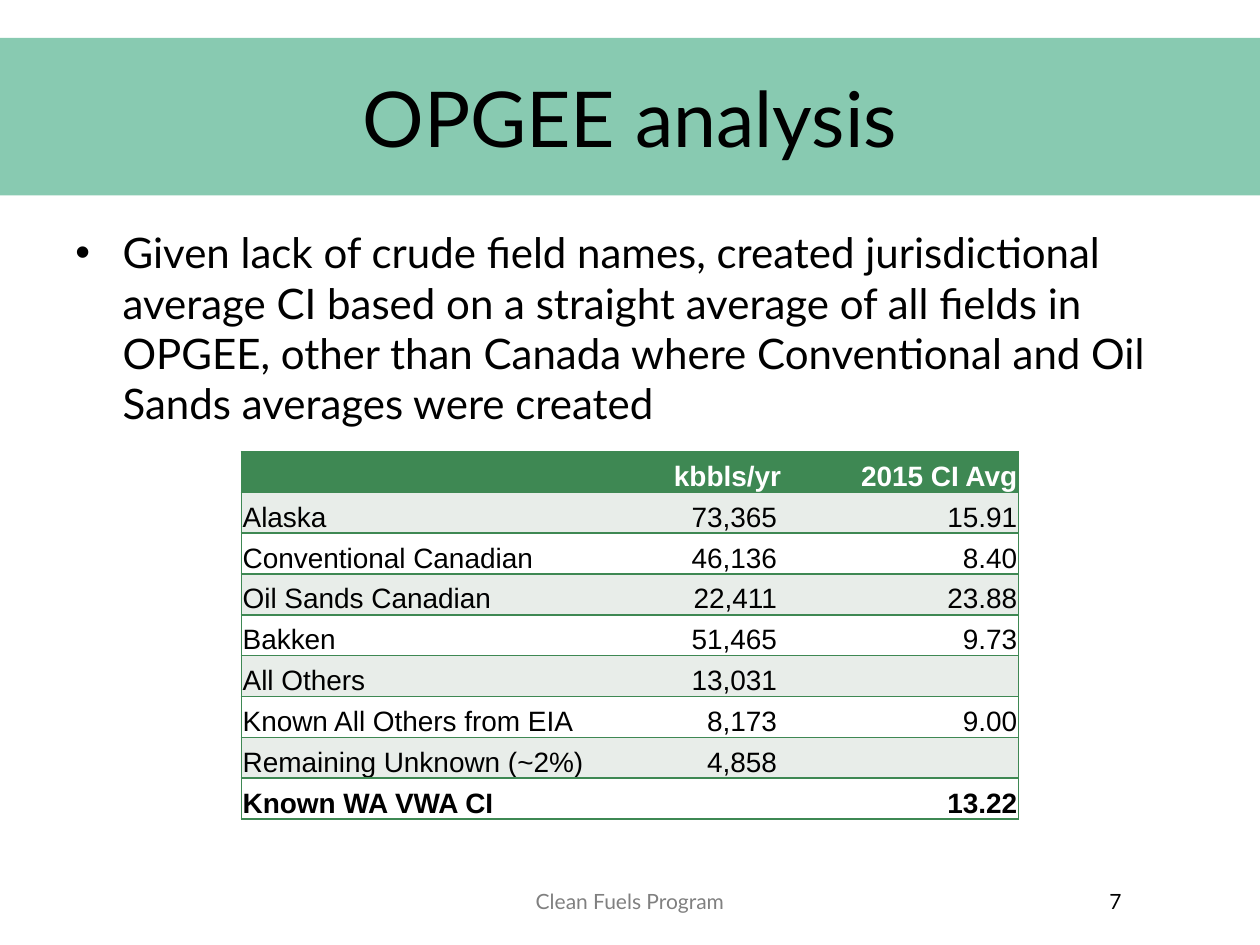
from lxml import etree
from pptx import Presentation
from pptx.dml.color import RGBColor
from pptx.enum.shapes import MSO_SHAPE
from pptx.enum.text import MSO_ANCHOR, PP_ALIGN
from pptx.oxml.ns import qn
from pptx.util import Pt

RECTANGLE = MSO_SHAPE.RECTANGLE
TOP, MIDDLE, BOTTOM = MSO_ANCHOR.TOP, MSO_ANCHOR.MIDDLE, MSO_ANCHOR.BOTTOM
LEFT, CENTER, RIGHT = PP_ALIGN.LEFT, PP_ALIGN.CENTER, PP_ALIGN.RIGHT

ROWS = [
    ("", "kbbls/yr", "2015 CI Avg"),
    ("Alaska", "73,365", "15.91"),
    ("Conventional Canadian", "46,136", "8.40"),
    ("Oil Sands Canadian", "22,411", "23.88"),
    ("Bakken", "51,465", "9.73"),
    ("All Others", "13,031", ""),
    ("Known All Others from EIA", "8,173", "9.00"),
    ("Remaining Unknown (~2%)", "4,858", ""),
    ("Known WA VWA CI", "", "13.22"),
]
COLUMN_WIDTHS = [217, 92, 135]


def color(value):
    return RGBColor.from_string(value)


class SlideBuilder:
    text_font, table_font = "Lato", "Arial"
    black, white, gray = "000000", "FFFFFF", "808080"
    banner_fill, green, band = "88CAB1", "3E8853", "E8EDE9"

    def __init__(self, slide):
        self.slide = slide

    def set_text(self, frame, text, size, align=LEFT, ink=black, font=text_font, bold=False):
        frame.text = text
        para = frame.paragraphs[0]
        para.alignment = align
        for span in para.runs:
            span.font.name = font
            span.font.size = Pt(size)
            span.font.bold = bold
            span.font.color.rgb = color(ink)
        return para

    def banner(self, text, left, top, width, height):
        shape = self.slide.shapes.add_shape(RECTANGLE, Pt(left), Pt(top), Pt(width), Pt(height))
        shape.shadow.inherit = False
        shape.fill.solid()
        shape.fill.fore_color.rgb = color(self.banner_fill)
        shape.line.fill.background()
        shape.text_frame.vertical_anchor = MIDDLE
        self.set_text(shape.text_frame, text, 44, CENTER)

    def text(self, text, left, top, width, height, size, align=LEFT, anchor=MIDDLE, ink=black):
        box = self.slide.shapes.add_textbox(Pt(left), Pt(top), Pt(width), Pt(height))
        box.text_frame.word_wrap = True
        box.text_frame.vertical_anchor = anchor
        return self.set_text(box.text_frame, text, size, align, ink)

    def bullet(self, text, left, top, width, height):
        para = self.text(text, left, top, width, height, 24, anchor=TOP)
        properties = para._p.get_or_add_pPr()
        properties.set("marL", str(Pt(27)))
        properties.set("indent", str(Pt(-27)))
        etree.SubElement(properties, qn("a:buFont")).set("typeface", "Arial")
        etree.SubElement(properties, qn("a:buChar")).set("char", "•")

    def border(self, cell, sides):
        properties = cell._tc.get_or_add_tcPr()
        for index, side in enumerate(("L", "R", "T", "B")):
            line = etree.Element(qn(f"a:ln{side}"))
            if side in sides:
                line.set("w", str(Pt(1)))
                fill = etree.SubElement(line, qn("a:solidFill"))
                etree.SubElement(fill, qn("a:srgbClr")).set("val", self.green)
            else:
                line.set("w", "0")
                etree.SubElement(line, qn("a:noFill"))
            properties.insert(index, line)

    def table(self, rows, widths, left, top, height):
        shape = self.slide.shapes.add_table(
            len(rows), len(widths), Pt(left), Pt(top), Pt(sum(widths)), Pt(height))
        table = shape.table
        for column, width in zip(table.columns, widths):
            column.width = Pt(width)
        last_row, last_column = len(rows) - 1, len(widths) - 1
        for r, values in enumerate(rows):
            table.rows[r].height = Pt(height / len(rows))
            header = r == 0
            fill = self.green if header else self.band if r % 2 else self.white
            for c, value in enumerate(values):
                cell = table.cell(r, c)
                cell.fill.solid()
                cell.fill.fore_color.rgb = color(fill)
                cell.vertical_anchor = BOTTOM
                cell.margin_left = cell.margin_top = Pt(0.7)
                cell.margin_right = Pt(3 if c == 1 and not header else 0.7)
                cell.margin_bottom = Pt(0)
                self.set_text(cell.text_frame, value, 16, RIGHT if c else LEFT,
                              self.white if header else self.black,
                              self.table_font, r in (0, last_row))
                self.border(cell, "TB" + {0: "L", last_column: "R"}.get(c, ""))


def main():
    deck = Presentation()
    deck.slide_width, deck.slide_height = Pt(720), Pt(540)
    page = SlideBuilder(deck.slides.add_slide(deck.slide_layouts[6]))
    page.banner("OPGEE analysis", 0, 21.6, 720, 90)
    page.bullet(
        "Given lack of crude field names, created jurisdictional average CI based on "
        "a straight average of all fields in OPGEE, other than Canada where "
        "Conventional and Oil Sands averages were created", 36, 126, 648, 356.4)
    page.table(ROWS, COLUMN_WIDTHS, 138, 258, 210)
    page.text("Clean Fuels Program", 246, 500.5, 228, 28.8, 12, CENTER, ink=page.gray)
    page.text("7", 516, 500.5, 132, 28.8, 12, RIGHT)
    deck.save("out.pptx")


if __name__ == "__main__":
    main()
